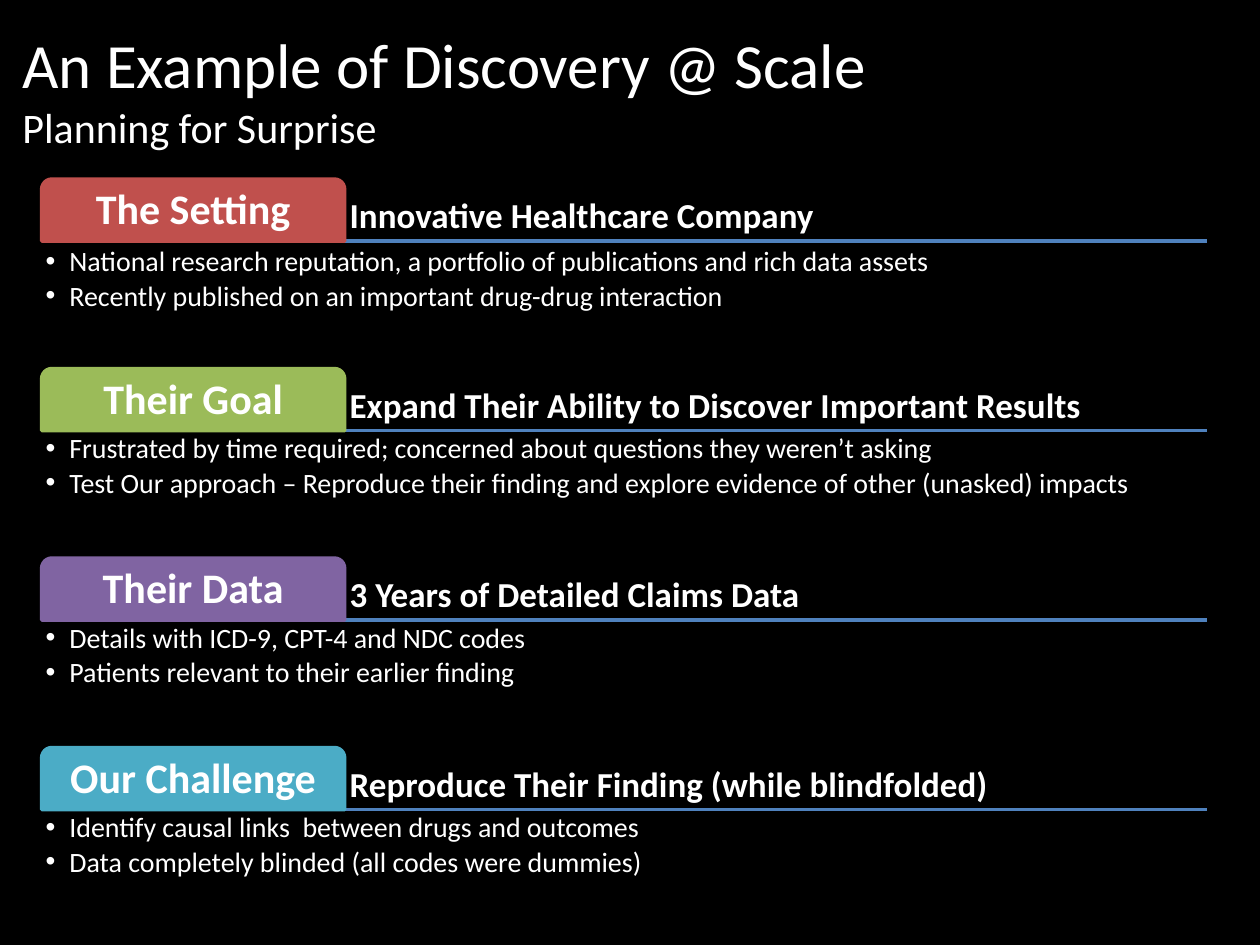
from dataclasses import dataclass

import lxml.etree
import pptx
import pptx.dml.color
import pptx.enum.shapes
import pptx.enum.text
import pptx.oxml.ns
import pptx.util
from pptx.util import Cm

PP_ALIGN = pptx.enum.text.PP_ALIGN
ANCHOR = pptx.enum.text.MSO_ANCHOR


@dataclass(frozen=True)
class Theme:
    font: str = "Calibri"
    background: str = "000000"
    text: str = "FFFFFF"
    rule: str = "4F81BD"
    title_size: int = 36
    label_size: int = 24
    heading_size: int = 20
    detail_size: int = 16
    line_width: int = 2


@dataclass(frozen=True)
class Topic:
    label: str
    color: str
    heading: str
    details: tuple
    detail_width: float
    detail_height: float
    detail_gap: float = 0


THEME = Theme()
LEFT, FIRST_TOP, ROW_PITCH = 0.84, 3.61, 3.82
TAB_WIDTH, TAB_HEIGHT = 6.11, 1.25
RULE_RIGHT, HEADING_WIDTH = 24.33, 16.33
BULLET_INDENT = 0.48

TOPICS = (
    Topic("The Setting", "C0504D", "Innovative Healthcare Company",
          ("National research reputation, a portfolio of publications and rich data assets",
           "Recently published on an important drug-drug interaction"),
          20.52, 1.65, 0.05),
    Topic("Their Goal", "9BBB59", "Expand Their Ability to Discover Important Results",
          ("Frustrated by time required; concerned about questions they weren’t asking",
           "Test Our approach – Reproduce their finding and explore evidence of other (unasked) impacts"),
          22.86, 1.9),
    Topic("Their Data", "8064A2", "3 Years of Detailed Claims Data",
          ("Details with ICD-9, CPT-4 and NDC codes",
           "Patients relevant to their earlier finding"),
          15.88, 1.88),
    Topic("Our Challenge", "4BACC6", "Reproduce Their Finding (while blindfolded)",
          ("Identify causal links  between drugs and outcomes",
           "Data completely blinded (all codes were dummies)"),
          22.43, 2.31),
)


def rgb(color):
    return pptx.dml.color.RGBColor.from_string(color)


def sub_element(parent, tag, **attributes):
    return lxml.etree.SubElement(parent, pptx.oxml.ns.qn(tag), attributes)


def write(paragraph, text, *, size, bold=False, align=PP_ALIGN.LEFT,
          line_spacing=None, space_after=0):
    paragraph.alignment = align
    paragraph.line_spacing = line_spacing
    paragraph.space_after = pptx.util.Pt(space_after)
    run = paragraph.add_run()
    run.text = text
    run.font.name = THEME.font
    run.font.size = pptx.util.Pt(size)
    run.font.bold = bold
    run.font.color.rgb = rgb(THEME.text)


def set_frame(frame, anchor, left, top, right, bottom):
    frame.word_wrap = True
    frame.auto_size = pptx.enum.text.MSO_AUTO_SIZE.NONE
    frame.vertical_anchor = anchor
    frame.margin_left, frame.margin_top = Cm(left), Cm(top)
    frame.margin_right, frame.margin_bottom = Cm(right), Cm(bottom)


def add_bullet(paragraph):
    properties = paragraph._p.get_or_add_pPr()
    properties.set("marL", str(Cm(BULLET_INDENT)))
    properties.set("indent", str(-Cm(BULLET_INDENT)))
    sub_element(properties, "a:buFont", typeface="Arial")
    sub_element(properties, "a:buChar", char="•")


def add_title(slide, title, subtitle):
    placeholder = slide.shapes.title
    placeholder.left, placeholder.top = Cm(0.2), Cm(0.2)
    placeholder.width, placeholder.height = Cm(22.86), Cm(3.18)
    set_frame(placeholder.text_frame, ANCHOR.MIDDLE, 0.25, 0.13, 0.25, 0.13)
    paragraph = placeholder.text_frame.paragraphs[0]
    write(paragraph, title, size=THEME.title_size)
    paragraph.add_line_break()
    line_break = paragraph._p.findall(pptx.oxml.ns.qn("a:br"))[-1]
    sub_element(line_break, "a:rPr", sz=str(THEME.title_size * 100))
    write(paragraph, subtitle, size=THEME.label_size)


def add_rule(slide, y):
    rule = slide.shapes.add_connector(
        pptx.enum.shapes.MSO_CONNECTOR.STRAIGHT, Cm(LEFT), Cm(y), Cm(RULE_RIGHT), Cm(y))
    rule.line.color.rgb = rgb(THEME.rule)
    rule.line.width = pptx.util.Pt(THEME.line_width)
    sub_element(rule._element.spPr, "a:effectLst")


def add_heading(slide, text, top):
    heading = slide.shapes.add_textbox(
        Cm(LEFT + TAB_WIDTH), Cm(top), Cm(HEADING_WIDTH), Cm(TAB_HEIGHT))
    set_frame(heading.text_frame, ANCHOR.BOTTOM, 0.1, 0.1, 0.1, 0.1)
    write(heading.text_frame.paragraphs[0], text,
          size=THEME.heading_size, bold=True, line_spacing=0.9)


def add_tab(slide, text, color, top):
    tab = slide.shapes.add_shape(
        pptx.enum.shapes.MSO_SHAPE.ROUND_2_SAME_RECTANGLE,
        Cm(LEFT), Cm(top), Cm(TAB_WIDTH), Cm(TAB_HEIGHT))
    tab.shadow.inherit = False
    tab.fill.solid()
    tab.fill.fore_color.rgb = rgb(color)
    tab.line.color.rgb = rgb(color)
    tab.line.width = pptx.util.Pt(THEME.line_width)
    set_frame(tab.text_frame, ANCHOR.MIDDLE, 0.12, 0.12, 0.12, 0.13)
    write(tab.text_frame.paragraphs[0], text, size=THEME.label_size,
          bold=True, align=PP_ALIGN.CENTER, line_spacing=0.9)


def add_details(slide, topic, top):
    box = slide.shapes.add_textbox(
        Cm(LEFT), Cm(top), Cm(topic.detail_width), Cm(topic.detail_height))
    frame = box.text_frame
    set_frame(frame, ANCHOR.TOP, 0.08, 0.08, 0.08, 0.08)
    for index, detail in enumerate(topic.details):
        paragraph = frame.add_paragraph() if index else frame.paragraphs[0]
        write(paragraph, detail, size=THEME.detail_size,
              line_spacing=0.9, space_after=2.4)
        add_bullet(paragraph)


def add_topic(slide, topic, top):
    bottom = top + TAB_HEIGHT
    add_rule(slide, bottom)
    add_heading(slide, topic.heading, top)
    add_tab(slide, topic.label, topic.color, top)
    add_details(slide, topic, bottom + topic.detail_gap)


def main():
    deck = pptx.Presentation()
    deck.slide_width, deck.slide_height = Cm(25.4), Cm(19.05)
    slide = deck.slides.add_slide(deck.slide_layouts.get_by_name("Title Only"))
    slide.background.fill.solid()
    slide.background.fill.fore_color.rgb = rgb(THEME.background)
    add_title(slide, "An Example of Discovery @ Scale ", "Planning for Surprise")
    for row, topic in enumerate(TOPICS):
        add_topic(slide, topic, FIRST_TOP + row * ROW_PITCH)
    deck.save("out.pptx")


if __name__ == "__main__":
    main()
